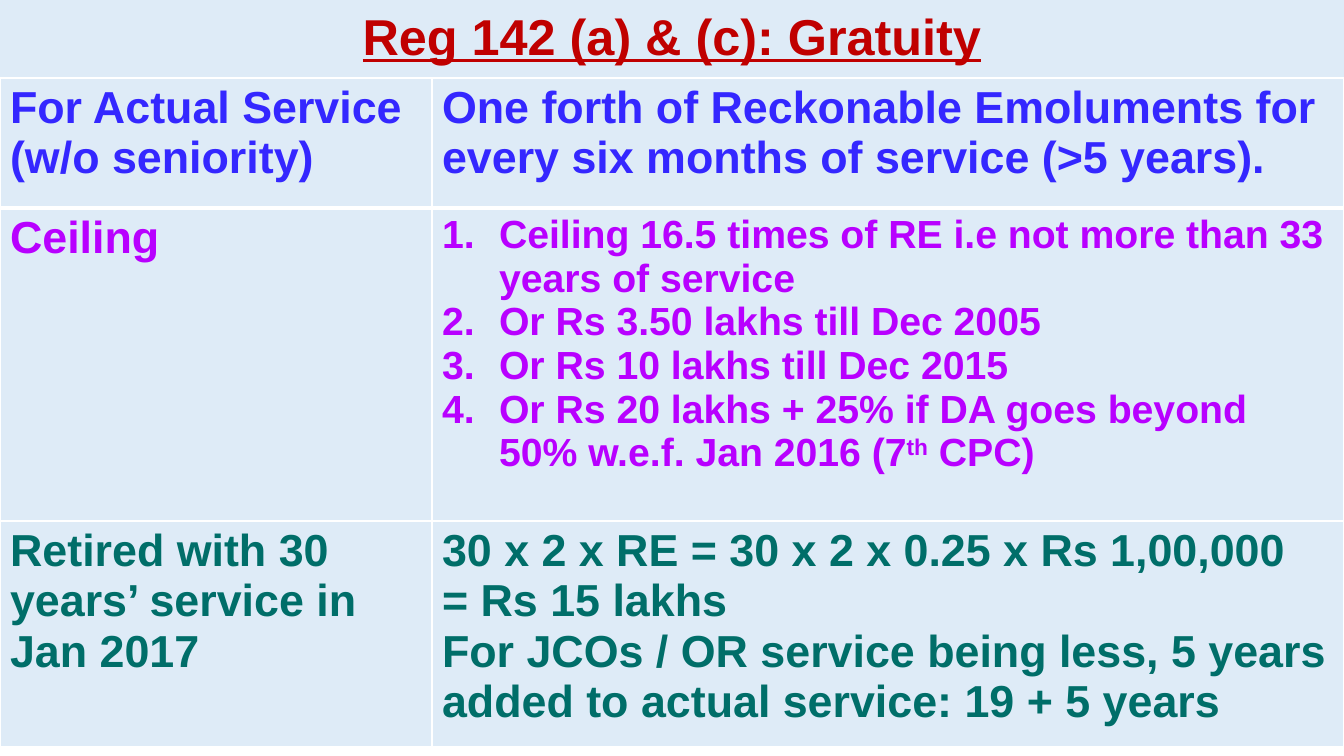
"""Build the gratuity rules slide."""
from lxml import etree
from pptx import Presentation
from pptx.dml.color import RGBColor
from pptx.enum.shapes import MSO_SHAPE
from pptx.enum.text import MSO_ANCHOR, PP_ALIGN
from pptx.oxml.ns import qn
from pptx.util import Pt

RECT = MSO_SHAPE.RECTANGLE
MIDDLE = MSO_ANCHOR.MIDDLE
CENTER = PP_ALIGN.CENTER
COLORS = {
    "back": "DEEBF7", "rule": "FFFFFF", "title": "C00000",
    "actual": "3427FF", "ceiling": "B800FF", "retired": "006E69",
}
FONT = "Arial"
WIDE, HIGH, TOP = 1344, 756, 78
COLS = [432, 912]
ROWS = [130, 313, 226]
INDENT = 57
TITLE = "Reg 142 (a) & (c): Gratuity"
RULES = [
    ("actual", ["For Actual Service (w/o seniority)"],
     ["One forth of Reckonable Emoluments for every six months of service (>5 years)."]),
    ("ceiling", ["Ceiling"],
     ["Ceiling 16.5 times of RE i.e not more than 33 years of service",
      "Or Rs 3.50 lakhs till Dec 2005",
      "Or Rs 10 lakhs till Dec 2015",
      "Or Rs 20 lakhs + 25% if DA goes beyond 50% w.e.f. Jan 2016 (7^th^ CPC)"]),
    ("retired", ["Retired with 30 years’ service in Jan 2017"],
     ["30 x 2 x RE = 30 x 2 x 0.25 x Rs 1,00,000",
      "= Rs 15 lakhs",
      "For JCOs / OR service being less, 5 years added to actual service: 19 + 5 years"]),
]


def px(count):
    """Turn pixels into EMU."""
    return round(count * 914400 / 100.8)


def paint(fill, name):
    """Give a fill one solid colour."""
    fill.solid()
    fill.fore_color.rgb = RGBColor.from_string(COLORS[name])


def style(para, size, name):
    """Set the bold font of a paragraph."""
    font = para.font
    font.name, font.size, font.bold = FONT, Pt(size), True
    font.color.rgb = RGBColor.from_string(COLORS[name])


def number(para):
    """Make a paragraph a numbered item with a hanging indent."""
    props = para._p.get_or_add_pPr()
    props.set("marL", str(px(INDENT)))
    props.set("indent", str(-px(INDENT)))
    mark = etree.Element(qn("a:buAutoNum"), type="arabicPeriod")
    props.insert(0, mark)


def write(frame, lines, size, name, listed=False):
    """Fill a text frame, raising any text between carets."""
    for index, line in enumerate(lines):
        para = frame.paragraphs[0] if index == 0 else frame.add_paragraph()
        style(para, size, name)
        if listed:
            number(para)
        for part, text in enumerate(line.split("^")):
            run = para.add_run()
            run.text = text
            if part % 2:
                run._r.get_or_add_rPr().set("baseline", "30000")


def border(cell, side, width):
    """Draw one side of a cell."""
    line = etree.SubElement(cell._tc.get_or_add_tcPr(), qn("a:ln" + side),
                            w=str(Pt(width)))
    fill = etree.SubElement(line, qn("a:solidFill"))
    etree.SubElement(fill, qn("a:srgbClr"), val=COLORS["rule"])


def add_title(slide):
    """Add the title band."""
    band = slide.shapes.add_shape(RECT, 0, 0, px(WIDE), px(TOP))
    band.shadow.inherit = False
    paint(band.fill, "back")
    band.line.fill.background()
    frame = band.text_frame
    frame.word_wrap = True
    frame.vertical_anchor = MIDDLE
    write(frame, [TITLE], 36, "title")
    para = frame.paragraphs[0]
    para.alignment = CENTER
    para.line_spacing = 0.9
    para.font.underline = True


def add_rules(slide):
    """Add the table of rules."""
    table = slide.shapes.add_table(len(ROWS), len(COLS), 0, px(TOP),
                                   px(sum(COLS)), px(sum(ROWS))).table
    table.first_row = table.horz_banding = False
    for col, width in zip(table.columns, COLS):
        col.width = px(width)
    for row, height in zip(table.rows, ROWS):
        row.height = px(height)
    for i, (name, *texts) in enumerate(RULES):
        for j, lines in enumerate(texts):
            cell = table.cell(i, j)
            for side in "LRTB":
                thick = (i, side) in [(0, "B"), (1, "T")]
                border(cell, side, 3 if thick else 1)
            paint(cell.fill, "back")
            listed = len(lines) == 4
            write(cell.text_frame, lines, 28 if listed else 32, name, listed)


def main():
    """Build and save the slide."""
    deck = Presentation()
    deck.slide_width, deck.slide_height = px(WIDE), px(HIGH)
    slide = deck.slides.add_slide(deck.slide_layouts[6])
    add_title(slide)
    add_rules(slide)
    deck.save("out.pptx")


if __name__ == "__main__":
    main()
